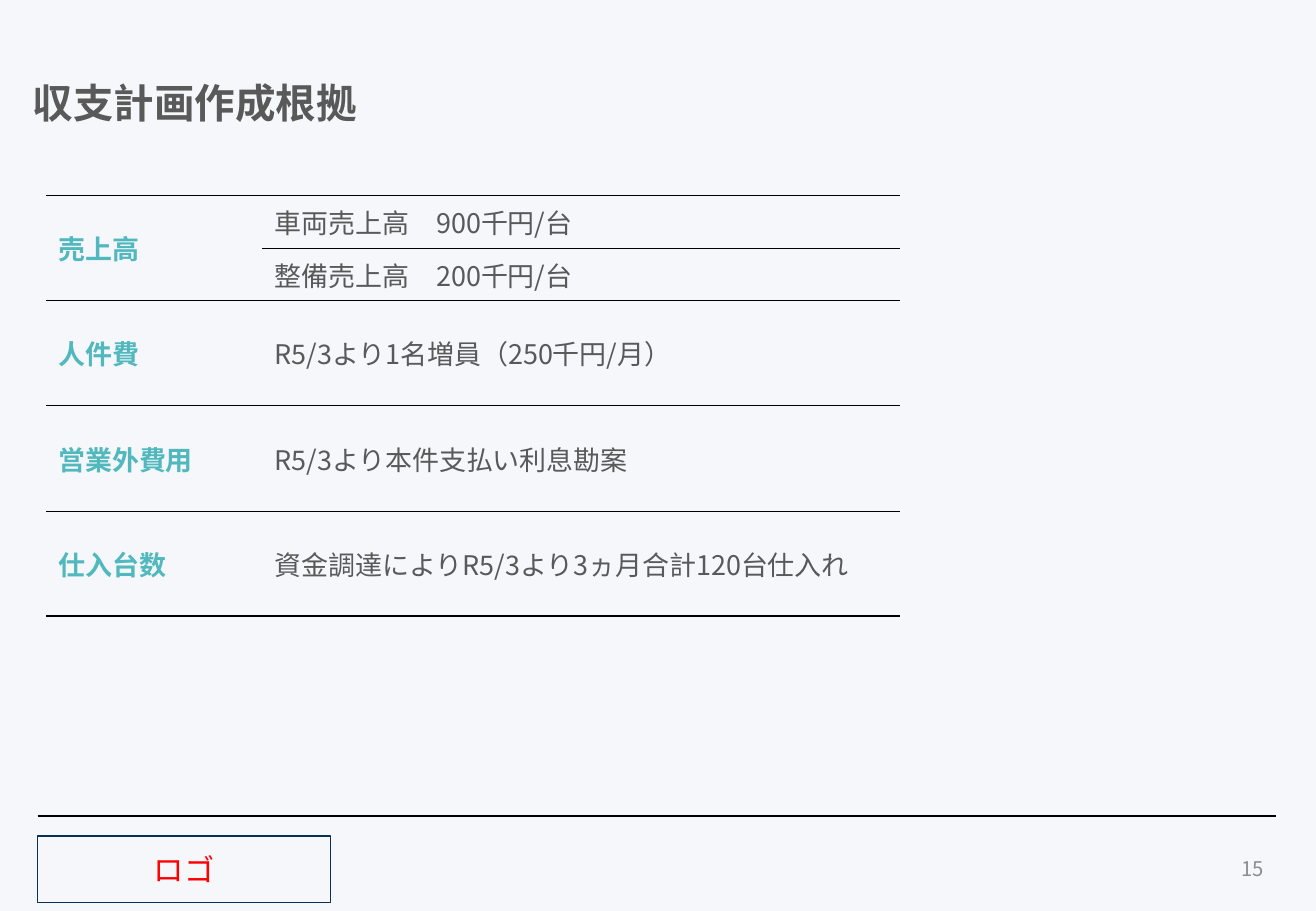
from lxml import etree
from pptx import Presentation
from pptx.dml.color import RGBColor
from pptx.enum.shapes import MSO_CONNECTOR, MSO_SHAPE
from pptx.enum.text import MSO_ANCHOR, PP_ALIGN
from pptx.oxml.ns import qn
from pptx.util import Inches, Pt

# Content
TITLE = "収支計画作成根拠"
LOGO_LABEL = "ロゴ"
PAGE_NUMBER = "15"
BASIS = [
    ("売上高", ["車両売上高　900千円/台", "整備売上高　200千円/台"]),
    ("人件費", ["R5/3より1名増員（250千円/月）"]),
    ("営業外費用", ["R5/3より本件支払い利息勘案"]),
    ("仕入台数", ["資金調達によりR5/3より3ヵ月合計120台仕入れ"]),
]

FONT = "Noto Sans CJK JP"
COLORS = {
    "background": "F5F7FB",
    "text": "595959",
    "item": "51B9BE",
    "rule": "000000",
    "logo_line": "073157",
    "logo_text": "FF0000",
    "page": "8C8C8C",
}
COLUMN_WIDTHS = (1.78, 5.25)
ITEM_HEIGHT = 0.866


def color(name):
    return RGBColor.from_string(COLORS[name])


def write(frame, text, size, color_name, bold=False,
          align=PP_ALIGN.LEFT, anchor=MSO_ANCHOR.MIDDLE):
    frame.text = text
    frame.word_wrap = True
    frame.vertical_anchor = anchor
    paragraph = frame.paragraphs[0]
    paragraph.alignment = align
    for run in paragraph.runs:
        run.font.size = Pt(size)
        run.font.bold = bold
        run.font.name = FONT
        run.font.color.rgb = color(color_name)
        latin = run.font._element.find(qn("a:latin"))
        east_asian = etree.Element(qn("a:ea"), typeface=FONT)
        latin.addnext(east_asian)


def set_borders(cell, top, bottom):
    """Draw rules above and below a cell; a width of 0 draws none."""
    properties = cell._tc.get_or_add_tcPr()
    widths = {"a:lnL": 0, "a:lnR": 0, "a:lnT": top, "a:lnB": bottom}
    for position, (tag, width) in enumerate(widths.items()):
        border = etree.Element(qn(tag), w=str(Pt(width)))
        if width:
            fill = etree.SubElement(border, qn("a:solidFill"))
            etree.SubElement(fill, qn("a:srgbClr"), val=COLORS["rule"])
        else:
            etree.SubElement(border, qn("a:noFill"))
        properties.insert(position, border)


prs = Presentation()
prs.slide_width, prs.slide_height = Inches(10.83), Inches(7.5)
slide = prs.slides.add_slide(prs.slide_layouts[6])
slide.background.fill.solid()
slide.background.fill.fore_color.rgb = color("background")
shapes = slide.shapes

# Footer: rule, logo frame and page number
footer_rule = shapes.add_connector(
    MSO_CONNECTOR.STRAIGHT, Inches(0.31), Inches(6.72), Inches(10.5), Inches(6.72))
footer_rule.line.color.rgb = color("rule")
footer_rule.line.width = Pt(1)
etree.SubElement(footer_rule._element.spPr, qn("a:effectLst"))

logo_frame = shapes.add_shape(
    MSO_SHAPE.RECTANGLE, Inches(0.31), Inches(6.88), Inches(2.41), Inches(0.55))
logo_frame.shadow.inherit = False
logo_frame.fill.background()
logo_frame.line.color.rgb = color("logo_line")
logo_frame.line.width = Pt(1)
write(logo_frame.text_frame, LOGO_LABEL, 18, "logo_text", align=PP_ALIGN.CENTER)

page_number = shapes.add_textbox(Inches(9.72), Inches(6.95), Inches(0.78), Inches(0.4))
write(page_number.text_frame, PAGE_NUMBER, 12, "page", align=PP_ALIGN.RIGHT)

# Title
title = shapes.add_textbox(Inches(0.17), Inches(0.59), Inches(6.12), Inches(0.5))
write(title.text_frame, TITLE, 24, "text", bold=True, anchor=MSO_ANCHOR.TOP)

# Table: every item has the same height, shared by its details
row_count = sum(len(details) for _, details in BASIS)
basis_table = shapes.add_table(
    row_count, len(COLUMN_WIDTHS), Inches(0.38), Inches(1.61),
    Inches(sum(COLUMN_WIDTHS)), Inches(ITEM_HEIGHT * len(BASIS))).table
basis_table.first_row = False
basis_table.horz_banding = False
for column, width in zip(basis_table.columns, COLUMN_WIDTHS):
    column.width = Inches(width)

row = 0
for item, details in BASIS:
    first, last = row, row + len(details) - 1
    for detail in details:
        basis_table.rows[row].height = Inches(ITEM_HEIGHT / len(details))
        top = 1 if row == 0 else 0.5
        bottom = 1 if row == row_count - 1 else 0.5
        item_cell, detail_cell = basis_table.cell(row, 0), basis_table.cell(row, 1)
        for cell in (item_cell, detail_cell):
            cell.fill.background()
        set_borders(item_cell, top if row == first else 0, bottom if row == last else 0)
        set_borders(detail_cell, top, bottom)
        write(detail_cell.text_frame, detail, 16, "text")
        detail_cell.vertical_anchor = MSO_ANCHOR.MIDDLE
        row += 1
    item_cell = basis_table.cell(first, 0)
    if last > first:
        item_cell.merge(basis_table.cell(last, 0))
    write(item_cell.text_frame, item, 16, "item", bold=True)
    item_cell.vertical_anchor = MSO_ANCHOR.MIDDLE

prs.save("out.pptx")
